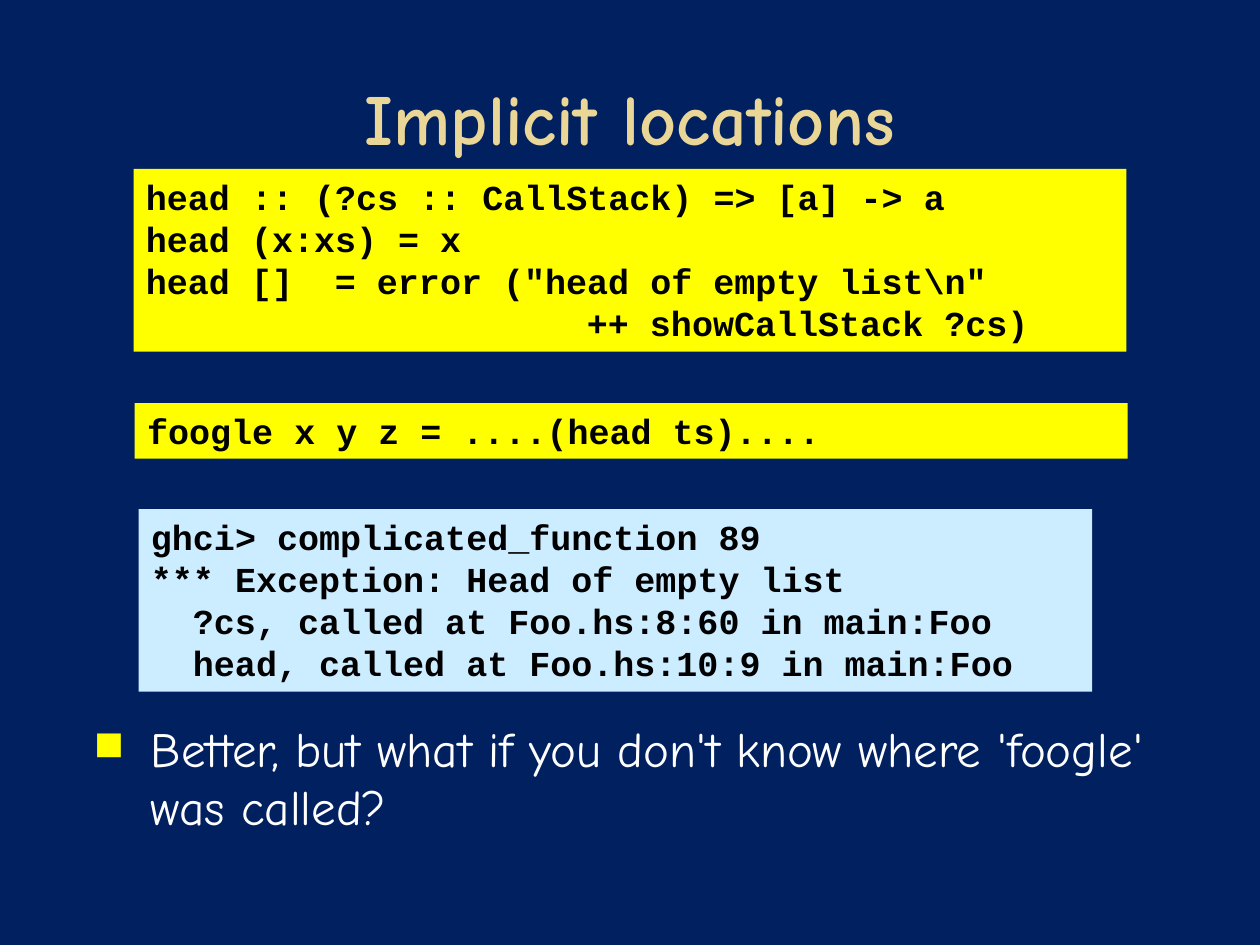
from dataclasses import dataclass

from lxml import etree
from pptx import Presentation
from pptx.dml.color import RGBColor
from pptx.enum.shapes import MSO_SHAPE
from pptx.enum.text import MSO_ANCHOR, MSO_AUTO_SIZE, PP_ALIGN
from pptx.oxml.ns import qn
from pptx.util import Pt

RECTANGLE = MSO_SHAPE.RECTANGLE
TOP, MIDDLE = MSO_ANCHOR.TOP, MSO_ANCHOR.MIDDLE
FIT_SHAPE = MSO_AUTO_SIZE.SHAPE_TO_FIT_TEXT
LEFT, CENTER = PP_ALIGN.LEFT, PP_ALIGN.CENTER

COLORS = {
    "navy": "002060",
    "gold": "EAD696",
    "yellow": "FFFF00",
    "sky": "CCECFF",
    "white": "FFFFFF",
    "black": "000000",
}
HEADING_FONT = "Comic Neue"
CODE_FONT = "Courier New"
CODE_SIZE = 20
CHARACTER_WIDTH = 0.6 * CODE_SIZE


@dataclass(frozen=True)
class Line:
    text: str
    indent: int = 0
    tab: int = 0


@dataclass(frozen=True)
class CodePanel:
    left: float
    top: float
    width: float
    height: float
    color: str
    lines: tuple[Line, ...]


CODE_PANELS = (
    CodePanel(79.2, 290.9, 545, 104.4, "sky", (
        Line("ghci> complicated_function 89"),
        Line("*** Exception: Head of empty list"),
        Line("?cs, called at Foo.hs:8:60 in main:Foo", indent=2),
        Line("head, called at Foo.hs:10:9 in main:Foo", indent=2),
    )),
    CodePanel(76.3, 96.5, 567.4, 104.4, "yellow", (
        Line("head :: (?cs :: CallStack) => [a] -> a"),
        Line("head (x:xs) = x"),
        Line('head []\t= error ("head of empty list\\n"', tab=12),
        Line("++ showCallStack ?cs)", indent=21),
    )),
    CodePanel(77, 230.4, 567.4, 31.7, "yellow", (
        Line("foogle x y z = ....(head ts)...."),
    )),
)


def rgb(name: str) -> RGBColor:
    return RGBColor.from_string(COLORS[name])


def write_text(para, text: str, *, font: str, size: float, color: str,
               bold: bool = False, align=LEFT, margin: float = 0,
               hanging: float = 0) -> None:
    para.alignment = align
    properties = para._p.get_or_add_pPr()
    properties.set("marL", str(Pt(margin)))
    properties.set("indent", str(Pt(-hanging)))
    span = para.add_run()
    span.text = text
    span.font.name = font
    span.font.size = Pt(size)
    span.font.bold = bold
    span.font.color.rgb = rgb(color)


def add_bullet(para, symbol: str, color: str) -> None:
    properties = para._p.get_or_add_pPr()
    bullet_color = etree.SubElement(properties, qn("a:buClr"))
    etree.SubElement(bullet_color, qn("a:srgbClr"), val=COLORS[color])
    etree.SubElement(properties, qn("a:buFont"), typeface=CODE_FONT)
    etree.SubElement(properties, qn("a:buChar"), char=symbol)


def add_tab_stop(para, position: float) -> None:
    stops = etree.SubElement(para._p.get_or_add_pPr(), qn("a:tabLst"))
    etree.SubElement(stops, qn("a:tab"), pos=str(Pt(position)), algn="l")


def add_text_box(page, top: float, anchor):
    box = page.shapes.add_textbox(Pt(36), Pt(top), Pt(648), Pt(90))
    box.text_frame.word_wrap = True
    box.text_frame.vertical_anchor = anchor
    return box.text_frame.paragraphs[0]


def draw_code_panel(page, panel: CodePanel) -> None:
    box = page.shapes.add_shape(RECTANGLE, Pt(panel.left), Pt(panel.top),
                                Pt(panel.width), Pt(panel.height))
    box.shadow.inherit = False
    box.fill.solid()
    box.fill.fore_color.rgb = rgb(panel.color)
    box.line.fill.background()
    frame = box.text_frame
    frame.word_wrap = True
    frame.vertical_anchor = TOP
    frame.auto_size = FIT_SHAPE
    for index, line in enumerate(panel.lines):
        para = frame.add_paragraph() if index else frame.paragraphs[0]
        write_text(para, line.text, font=CODE_FONT, size=CODE_SIZE, color="black",
                   bold=True, margin=line.indent * CHARACTER_WIDTH)
        if line.tab:
            add_tab_stop(para, line.tab * CHARACTER_WIDTH)


def main() -> None:
    deck = Presentation()
    deck.slide_width, deck.slide_height = Pt(720), Pt(540)
    page = deck.slides.add_slide(deck.slide_layouts[6])
    page.background.fill.solid()
    page.background.fill.fore_color.rgb = rgb("navy")

    title = add_text_box(page, 21.6, MIDDLE)
    write_text(title, "Implicit locations", font=HEADING_FONT, size=41,
               color="gold", bold=True, align=CENTER)

    question = add_text_box(page, 406.8, TOP)
    write_text(question, "Better, but what if you don't know where 'foogle' was called?",
               font=HEADING_FONT, size=28, color="white", margin=43.2, hanging=32.4)
    add_bullet(question, "■", "yellow")

    for panel in CODE_PANELS:
        draw_code_panel(page, panel)

    deck.save("out.pptx")


if __name__ == "__main__":
    main()
